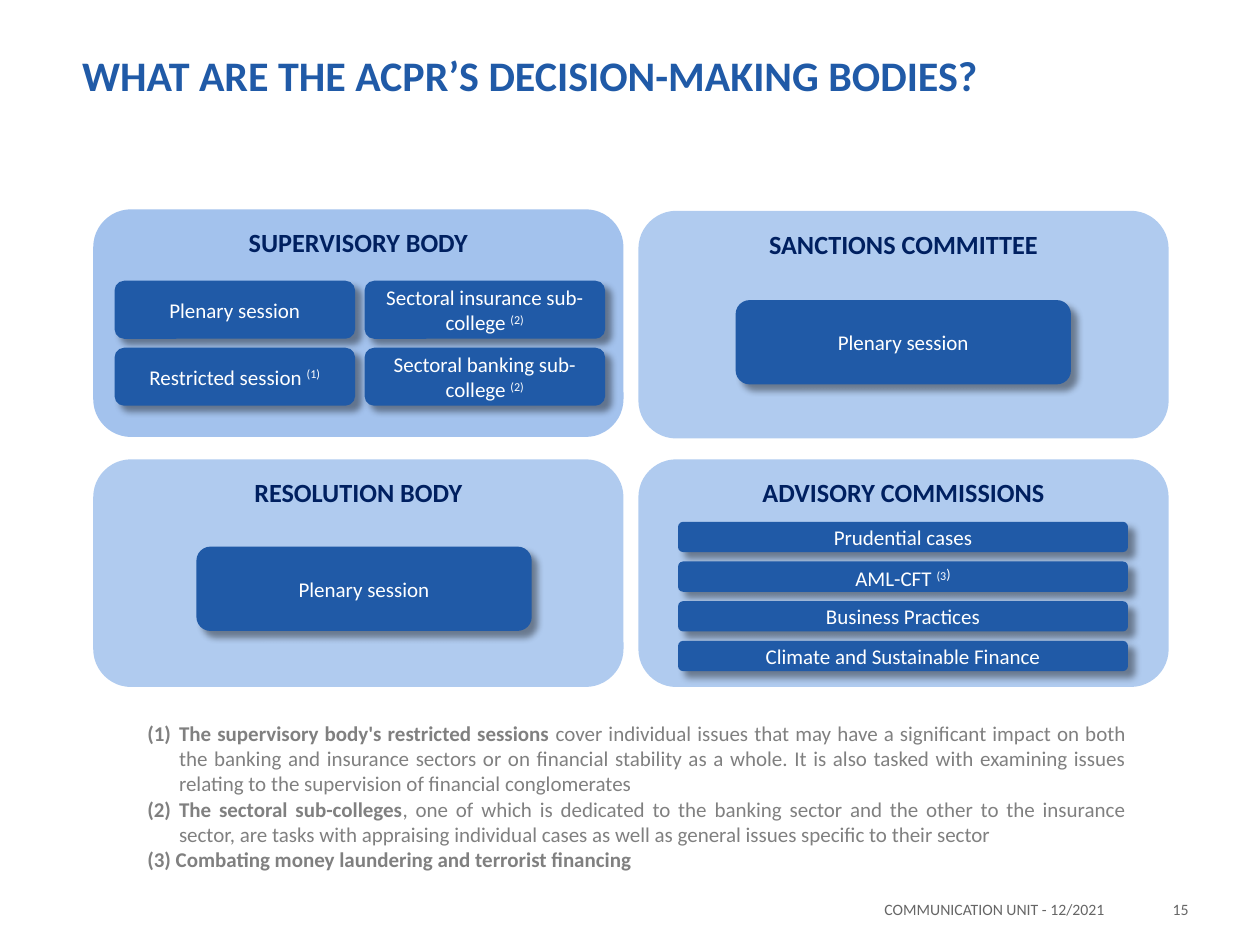
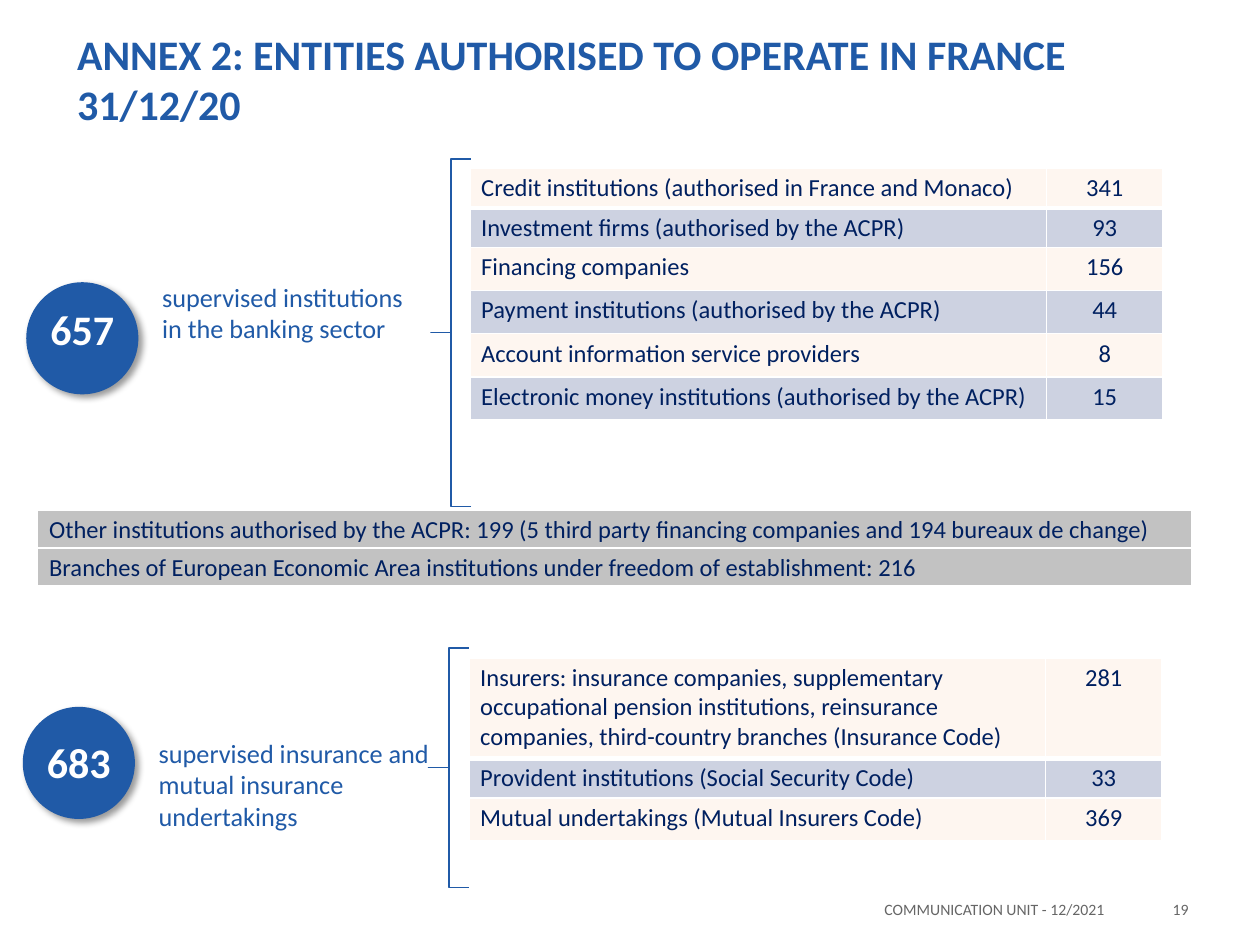
from lxml.etree import SubElement
from pptx import Presentation
from pptx.dml.color import RGBColor
from pptx.enum.shapes import MSO_SHAPE as Shape
from pptx.enum.text import MSO_ANCHOR as Anchor, PP_ALIGN as Align
from pptx.oxml.ns import qn
from pptx.util import Cm, Pt

FONT = "Calibri"
BLUE = RGBColor(0x20, 0x5A, 0xA7)
NAVY = RGBColor(0x00, 0x20, 0x60)
SKY = RGBColor(0x62, 0x99, 0xE1)
DEEP_SKY = RGBColor(0x48, 0x87, 0xDC)
WHITE = RGBColor(0xFF, 0xFF, 0xFF)
BLACK = RGBColor(0x00, 0x00, 0x00)
NOTE_GREY = RGBColor(0x80, 0x80, 0x80)
FOOTER_GREY = RGBColor(0x66, 0x66, 0x66)
CREAM = RGBColor(0xFE, 0xF6, 0xF0)
LAVENDER = RGBColor(0xCD, 0xD2, 0xE1)
SILVER = RGBColor(0xC2, 0xC2, 0xC2)

RAISED = {"raised": True}
BOLD = {"bold": True}

BANKING = [
    ("Credit institutions (authorised in France and Monaco)", "341"),
    ("Investment firms (authorised by the ACPR)", "93"),
    ("Financing companies", "156"),
    ("Payment institutions (authorised by the ACPR)", "44"),
    ("Account information service providers", "8"),
    ("Electronic money institutions (authorised by the ACPR)", "15"),
]
INSURANCE = [
    ("Insurers: insurance companies, supplementary occupational pension institutions, "
     "reinsurance companies, third-country branches (Insurance Code)", "281"),
    ("Provident institutions (Social Security Code)", "33"),
    ("Mutual undertakings (Mutual Insurers Code)", "369"),
]
OTHERS = ("Other institutions authorised by the ACPR: 199 "
          "(5 third party financing companies and 194 bureaux de change)")
BRANCHES = ("Branches of European Economic Area institutions "
            "under freedom of establishment: 216")


def area(left, top, width, height):
    return Cm(left), Cm(top), Cm(width), Cm(height)


def write(frame, *lines, size=12, color=WHITE, bold=False, align=Align.LEFT,
          anchor=Anchor.TOP, wrap=True):
    frame.word_wrap = wrap
    frame.vertical_anchor = anchor
    for index, line in enumerate(lines):
        para = frame.paragraphs[0] if index == 0 else frame.add_paragraph()
        para.alignment = align
        spans = [(line, {})] if isinstance(line, str) else line
        for text, style in spans:
            span = para.add_run()
            span.text = text
            span.font.name = FONT
            span.font.size = Pt(style.get("size", size))
            span.font.bold = style.get("bold", bold)
            span.font.color.rgb = color
            if style.get("raised"):
                span._r.get_or_add_rPr().set("baseline", "30000")


def add_text(slide, place, *lines, **style):
    box = slide.shapes.add_textbox(*area(*place))
    write(box.text_frame, *lines, **style)
    return box


def add_title(slide, text, left, top):
    title = slide.shapes.title
    title.left, title.top, title.width, title.height = area(left, top, 22.86, 3.18)
    write(title.text_frame, text, size=24, color=BLUE, bold=True, anchor=Anchor.MIDDLE)


def add_footer(slide, number):
    for left, width, text in ((8.69, 13.82, "COMMUNICATION UNIT - 12/2021"),
                              (22.71, 1.5, number)):
        add_text(slide, (left, 18.01, width, 0.99), text,
                 size=9, color=FOOTER_GREY, align=Align.RIGHT)


def add_filled(slide, kind, place, color):
    shape = slide.shapes.add_shape(kind, *area(*place))
    shape.shadow.inherit = False
    shape.fill.solid()
    shape.fill.fore_color.rgb = color
    shape.line.fill.background()
    return shape


def set_alpha(color_element, percent):
    SubElement(color_element, qn("a:alpha"), val=str(percent * 1000))


def cast_shadow(shape, distance):
    effects = shape._element.spPr.find(qn("a:effectLst"))
    shadow = SubElement(effects, qn("a:outerShdw"), blurRad=str(Pt(4)),
                        dist=str(Pt(distance)), dir="2700000",
                        algn="tl", rotWithShape="0")
    set_alpha(SubElement(shadow, qn("a:srgbClr"), val=str(BLACK)), 40)


def add_panel(slide, left, top, heading, color=SKY):
    panel = add_filled(slide, Shape.ROUNDED_RECTANGLE, (left, top, 10.69, 4.59), color)
    set_alpha(panel._element.spPr.find(".//" + qn("a:srgbClr")), 50)
    write(panel.text_frame, heading, size=15, color=NAVY, bold=True, align=Align.CENTER)


def add_button(slide, place, label):
    button = add_filled(slide, Shape.ROUNDED_RECTANGLE, place, BLUE)
    cast_shadow(button, 5)
    write(button.text_frame, label, align=Align.CENTER, anchor=Anchor.MIDDLE)


def number_paragraph(para):
    properties = para._p.get_or_add_pPr()
    properties.set("marL", str(Cm(0.64)))
    properties.set("indent", str(-Cm(0.64)))
    SubElement(properties, qn("a:buFont"), typeface="+mj-lt")
    SubElement(properties, qn("a:buAutoNum"), type="arabicParenBoth")


def add_total(slide, left, top, number, number_top):
    circle = add_filled(slide, Shape.OVAL, (left, top, 2.26, 2.26), BLUE)
    cast_shadow(circle, 3)
    add_text(slide, (left + 0.23, number_top, 1.8, 1.27), number,
             size=24, bold=True, align=Align.CENTER, wrap=False)


def add_bracket(slide, *place):
    bracket = slide.shapes.add_shape(Shape.LEFT_BRACE, *area(*place))
    bracket.shadow.inherit = False
    bracket.adjustments[0] = 0
    bracket.adjustments[1] = 0.5
    bracket.fill.background()
    bracket.line.color.rgb = BLUE
    bracket.line.width = Pt(1)


def set_borders(cell, top, bottom):
    properties = cell._tc.get_or_add_tcPr()
    for side, width in (("lnL", 1), ("lnR", 1), ("lnT", top), ("lnB", bottom)):
        line = SubElement(properties, qn("a:" + side), w=str(Pt(width)))
        fill = SubElement(line, qn("a:solidFill"))
        SubElement(fill, qn("a:srgbClr"), val=str(WHITE))


def add_rows(slide, left, top, rows, widths, heights, fills):
    frame = slide.shapes.add_table(len(rows), len(widths),
                                   *area(left, top, sum(widths), sum(heights)))
    table = frame.table
    table.first_row = False
    table.horz_banding = False
    for column, width in zip(table.columns, widths):
        column.width = Cm(width)
    for r, (texts, height) in enumerate(zip(rows, heights)):
        table.rows[r].height = Cm(height)
        for c, text in enumerate(texts):
            cell = table.cell(r, c)
            set_borders(cell, 3 if r == 1 else 1, 3 if r == 0 else 1)
            cell.fill.solid()
            cell.fill.fore_color.rgb = fills[r % len(fills)]
            cell.margin_left = cell.margin_right = Cm(0.23)
            cell.margin_top = cell.margin_bottom = Cm(0.1)
            write(cell.text_frame, text, size=14, color=NAVY,
                  align=Align.CENTER if c else Align.LEFT)


def build_bodies(slide):
    add_title(slide, "WHAT ARE THE ACPR’S DECISION-MAKING BODIES?", 1.4, -0.08)
    add_panel(slide, 1.88, 9.26, "RESOLUTION BODY")
    add_panel(slide, 12.87, 9.26, "ADVISORY COMMISSIONS")
    add_panel(slide, 12.87, 4.25, "SANCTIONS COMMITTEE")
    add_panel(slide, 1.88, 4.22, "SUPERVISORY BODY", DEEP_SKY)

    sessions = [
        "Plenary session",
        [("Sectoral insurance sub-college ", {}), ("(2)", RAISED)],
        [("Restricted session ", {}), ("(1)", RAISED)],
        [("Sectoral banking sub-college ", {}), ("(2)", RAISED)],
    ]
    for index, session in enumerate(sessions):
        row, column = divmod(index, 2)
        add_button(slide, (2.31 + 5.04 * column, 5.66 + 1.35 * row, 4.85, 1.17), session)

    commissions = [
        "Prudential cases",
        [("AML-CFT ", {}), ("(3", RAISED), (")", {"raised": True, "size": 14})],
        "Business Practices",
        "Climate and Sustainable Finance",
    ]
    for index, commission in enumerate(commissions):
        add_button(slide, (13.67, 10.52 + 0.8 * index, 9.07, 0.61), commission)

    for left, top in ((14.83, 6.05), (3.96, 11.02)):
        add_button(slide, (left, top, 6.76, 1.7), "Plenary session")

    notes = add_text(
        slide, (2.72, 14.4, 20.24, 3.33),
        [("The supervisory body's restricted sessions ", BOLD),
         ("cover individual issues that may have a significant impact on both the banking "
          "and insurance sectors or on financial stability as a whole. It is also tasked "
          "with examining issues relating to the supervision of financial conglomerates", {})],
        [("The sectoral sub-colleges", BOLD),
         (", one of which is dedicated to the banking sector and the other to the insurance "
          "sector, are tasks with appraising individual cases as well as general issues "
          "specific to their sector", {})],
        [("(3) Combating money laundering and terrorist financing", BOLD)],
        color=NOTE_GREY, align=Align.JUSTIFY)
    for para in notes.text_frame.paragraphs[:2]:
        number_paragraph(para)
    add_footer(slide, "15")


def build_entities(slide):
    add_footer(slide, "19")
    add_title(slide, "ANNEX 2: ENTITIES AUTHORISED TO OPERATE IN FRANCE 31/12/20", 1.3, 0)
    widths = (11.63, 2.34)
    bands = (CREAM, LAVENDER)

    add_rows(slide, 9.47, 3.4, BANKING, widths, [0.79] * 2 + [0.87] * 4, bands)
    add_text(slide, (3.02, 5.54, 5.87, 2.18), "supervised institutions",
             "in the banking sector", size=15, color=BLUE)
    add_total(slide, 0.53, 5.69, "657", 5.99)
    add_bracket(slide, 8.69, 3.2, 0.81, 7.01)

    add_rows(slide, 0.76, 10.29, [[OTHERS]], [23.27], [0.89], [SILVER])
    add_rows(slide, 0.76, 11.05, [[BRANCHES]], [23.27], [0.71], [SILVER])

    add_total(slide, 0.46, 14.25, "683", 14.73)
    add_text(slide, (2.95, 14.73, 6.81, 2.18),
             "supervised insurance and mutual insurance undertakings", size=15, color=BLUE)
    add_rows(slide, 9.45, 13.26, INSURANCE, widths, [2.03, 0.79, 0.87], bands)
    add_bracket(slide, 8.64, 13.06, 0.81, 4.83)


def main():
    deck = Presentation()
    deck.slide_width, deck.slide_height = Cm(25.4), Cm(19.05)
    for build in (build_bodies, build_entities):
        build(deck.slides.add_slide(deck.slide_layouts[5]))
    deck.save("out.pptx")


if __name__ == "__main__":
    main()
